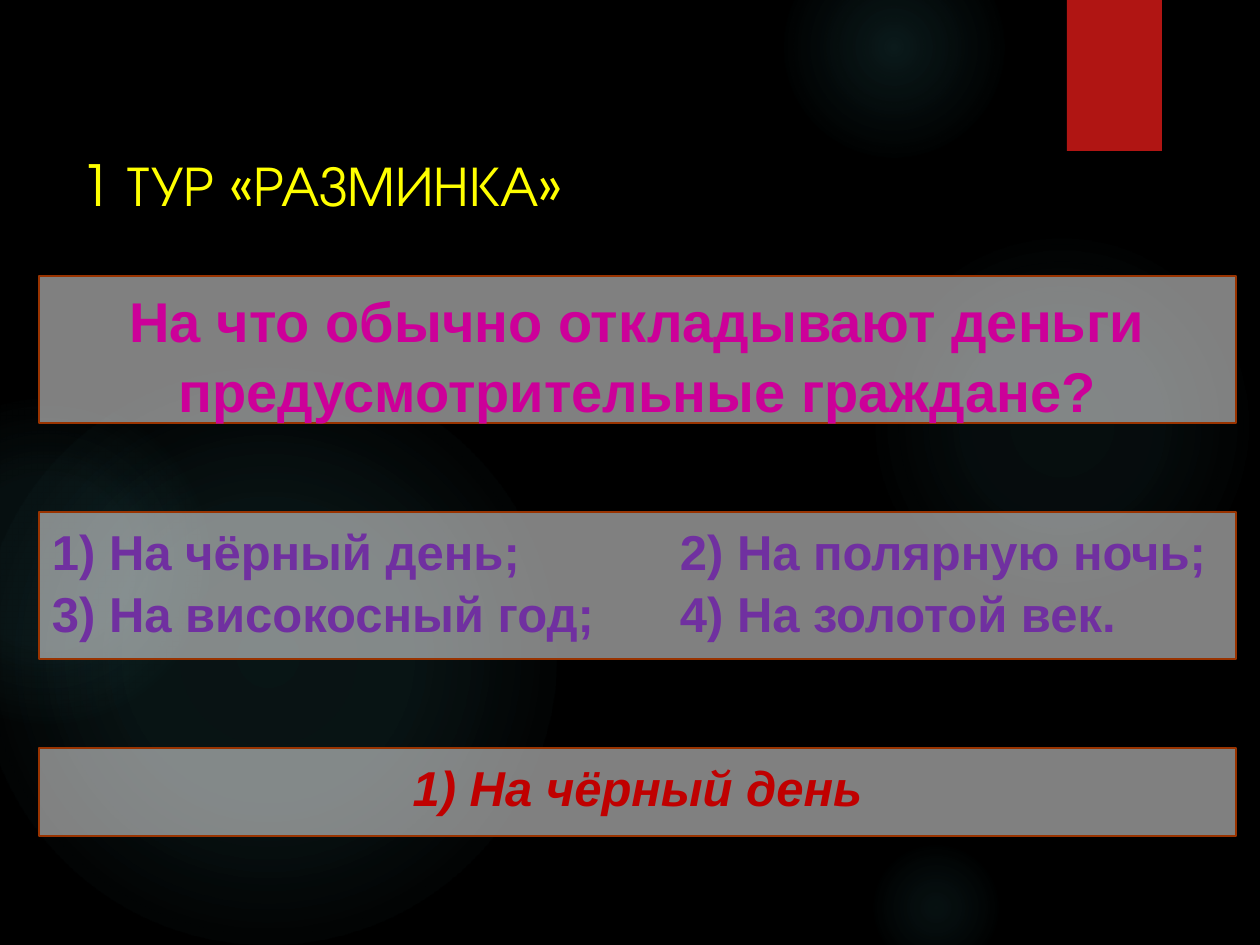
"""Build the warm-up quiz slide with its question, options and answer."""
import lxml.etree
import pptx
import pptx.dml.color
import pptx.enum.shapes
import pptx.enum.text
import pptx.oxml
import pptx.oxml.ns
import pptx.util

PX = 914400 / 126
COLORS = {
    "background": "000000", "glow": "50B9C1", "ribbon": "B01513",
    "panel": "FFFFFF", "border": "993300", "title": "FFFF00",
    "question": "CC0099", "options": "7030A0", "answer": "C00000",
}
RGB = {part: pptx.dml.color.RGBColor.from_string(value) for part, value in COLORS.items()}
ALIGN = pptx.enum.text.PP_ALIGN
ANCHOR = pptx.enum.text.MSO_ANCHOR
SHAPE = pptx.enum.shapes.MSO_SHAPE
qn = pptx.oxml.ns.qn


def px(*lengths):
    return [pptx.util.Emu(round(length * PX)) for length in lengths]


def write_text(shape, text, *, size, color, font="Arial", bold=True, italic=False,
               align=ALIGN.LEFT, anchor=ANCHOR.TOP, spacing=1.05, bottom=6, tab=None):
    frame = shape.text_frame
    frame.word_wrap = True
    frame.auto_size = pptx.enum.text.MSO_AUTO_SIZE.NONE
    frame.vertical_anchor = anchor
    frame.margin_left, frame.margin_top, frame.margin_right, frame.margin_bottom = px(13, 7, 13, bottom)
    frame.text = text
    for paragraph in frame.paragraphs:
        paragraph.alignment = align
        paragraph.line_spacing = spacing
        paragraph.space_before = pptx.util.Pt(0)
        if tab:
            stops = lxml.etree.SubElement(paragraph._p.get_or_add_pPr(), qn("a:tabLst"))
            lxml.etree.SubElement(stops, qn("a:tab"), pos=str(px(tab)[0]), algn="l")
        for run in paragraph.runs:
            run.font.name = font
            run.font.size = pptx.util.Pt(size)
            run.font.bold = bold
            run.font.italic = italic
            run.font.color.rgb = RGB[color]


deck = pptx.Presentation()
deck.slide_width, deck.slide_height = px(1260, 945)
slide = deck.slides.add_slide(deck.slide_layouts[5])
slide.background.fill.solid()
slide.background.fill.fore_color.rgb = RGB["background"]

glows = [
    (868, 231, 388, ((0, 7), (36, 6), (69, 0))),
    (784, -63, 220, ((0, 14), (36, 7), (73, 0))),
    (868, 840, 136, ((0, 9), (36, 5), (66, 0))),
    (-21, 368, 577, ((0, 11), (36, 10), (75, 0))),
    (-116, 399, 325, ((0, 8), (36, 8), (72, 0))),
]
for left, top, diameter, stops in glows:
    glow = slide.shapes.add_shape(SHAPE.OVAL, *px(left, top, diameter, diameter))
    glow.shadow.inherit = False
    glow.line.fill.background()
    stop_xml = "".join(
        f'<a:gs pos="{position * 1000}"><a:srgbClr val="{COLORS["glow"]}">'
        f'<a:alpha val="{opacity * 1000}"/></a:srgbClr></a:gs>'
        for position, opacity in stops
    )
    gradient = pptx.oxml.parse_xml(
        f'<a:gradFill {pptx.oxml.ns.nsdecls("a")} rotWithShape="1"><a:gsLst>{stop_xml}</a:gsLst>'
        '<a:path path="circle"><a:fillToRect l="50000" t="50000" r="50000" b="50000"/></a:path>'
        '</a:gradFill>'
    )
    glow._element.spPr.find(qn("a:prstGeom")).addnext(gradient)

ribbon = slide.shapes.add_shape(SHAPE.RECTANGLE, *px(1067, 0, 95, 151))
ribbon.shadow.inherit = False
ribbon.fill.solid()
ribbon.fill.fore_color.rgb = RGB["ribbon"]
ribbon.line.fill.background()

title = slide.shapes.title
title.left, title.top, title.width, title.height = px(67, 63, 973, 193)
write_text(title, "1 ТУР «РАЗМИНКА»", size=32.4, color="title", font="TeX Gyre Adventor",
           bold=False, anchor=ANCHOR.BOTTOM, spacing=1, bottom=38)

panels = [
    (512, 147, "1) На чёрный день;\t2) На полярную ночь;\n3) На високосный год;\t4) На золотой век.",
     {"size": 28, "color": "options", "tab": 628}),
    (748, 88, "1) На чёрный день",
     {"size": 28, "color": "answer", "italic": True, "align": ALIGN.CENTER}),
    (276, 147, "На что обычно откладывают деньги предусмотрительные граждане?",
     {"size": 32, "color": "question", "align": ALIGN.CENTER}),
]
for top, height, text, style in panels:
    panel = slide.shapes.add_shape(SHAPE.RECTANGLE, *px(39, top, 1197, height))
    panel.shadow.inherit = False
    panel.fill.solid()
    panel.fill.fore_color.rgb = RGB["panel"]
    tint = panel._element.spPr.find(qn("a:solidFill")).find(qn("a:srgbClr"))
    lxml.etree.SubElement(tint, qn("a:alpha"), val="50000")
    panel.line.color.rgb = RGB["border"]
    panel.line.width = pptx.util.Pt(0.75)
    write_text(panel, text, **style)

deck.save("out.pptx")
